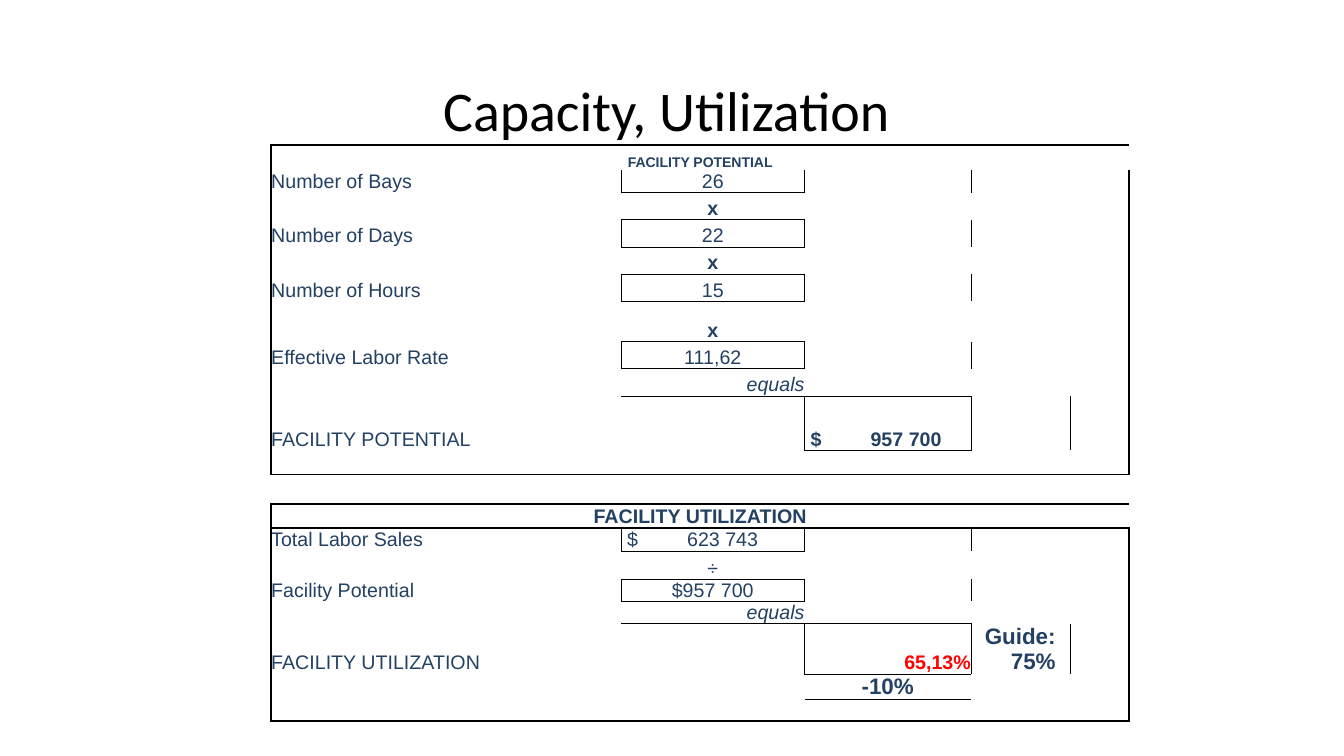
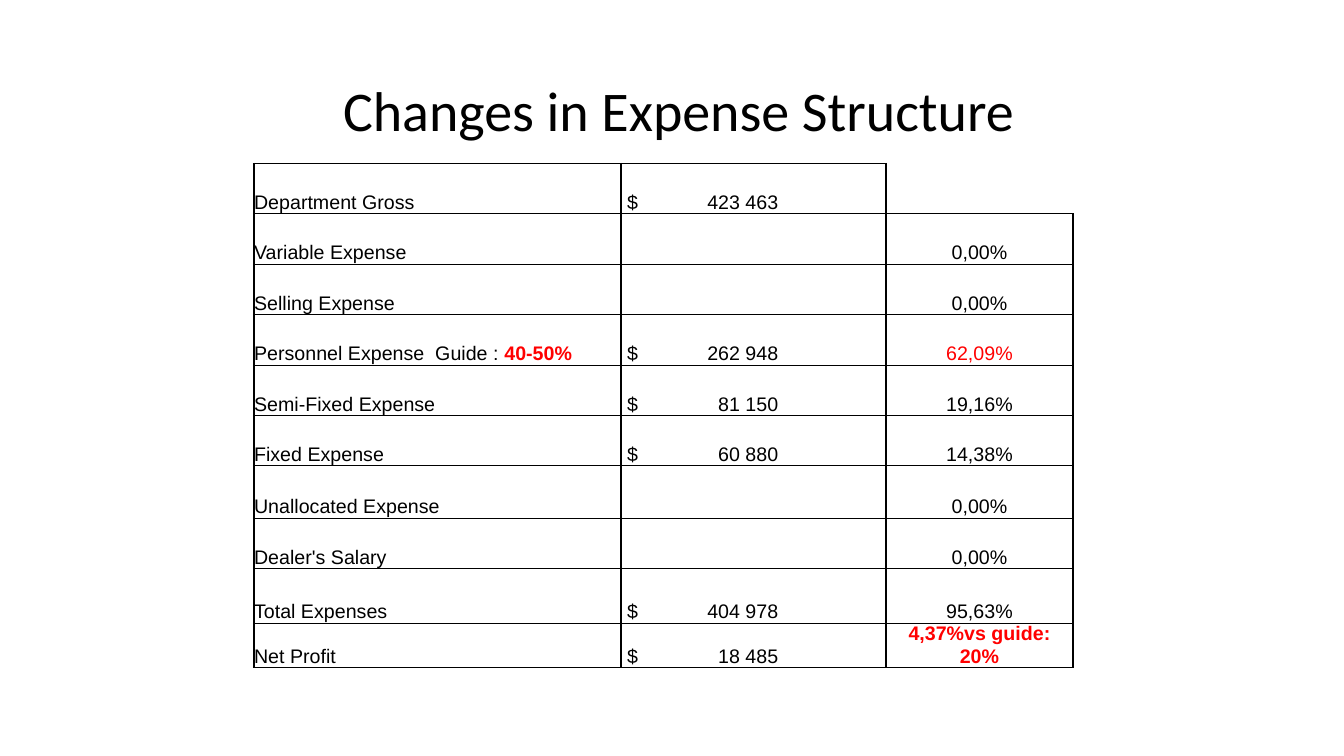
from dataclasses import dataclass

from lxml.etree import SubElement
from pptx import Presentation
from pptx.dml.color import RGBColor
from pptx.enum.text import MSO_ANCHOR, PP_ALIGN
from pptx.oxml.ns import qn
from pptx.util import Inches, Pt

LEFT, CENTER, RIGHT = PP_ALIGN.LEFT, PP_ALIGN.CENTER, PP_ALIGN.RIGHT
NO_STYLE_NO_GRID = "{2D5ABB26-0587-4C30-8999-92F81FD0307C}"
# Side of a cell: step to the neighbour and the neighbour's matching side
SIDES = {"L": (0, -1, "R"), "R": (0, 1, "L"), "T": (-1, 0, "B"), "B": (1, 0, "T")}


@dataclass(frozen=True)
class Theme:
    title_font: str = "Calibri"
    body_font: str = "Arial"
    black: str = "000000"
    navy: str = "244062"
    red: str = "FF0000"
    white: str = "FFFFFF"
    title_size: int = 40
    guide_size: int = 16
    body_size: int = 14
    small_size: int = 10
    thin: float = 0.5
    frame: float = 1.5
    column: float = 2


THEME = Theme()


def write(paragraph, text, align=LEFT, tab=None, size=THEME.body_size,
          color=THEME.black, font=THEME.body_font, bold=False, italic=False):
    paragraph.alignment = align
    if tab:
        tabs = SubElement(paragraph._p.get_or_add_pPr(), qn("a:tabLst"))
        SubElement(tabs, qn("a:tab"), pos=str(Inches(tab)), algn="r")
    run = paragraph.add_run()
    run.text = text
    run.font.name = font
    run.font.size = Pt(size)
    run.font.bold = bold
    run.font.italic = italic
    run.font.color.rgb = RGBColor.from_string(color)


def outline(boxes, row_count, column_count):
    """Map each cell to its border widths, on both sides of every shared edge."""
    borders = {}
    for top, left, bottom, right, sides, width in boxes:
        for row in range(top, bottom + 1):
            for column in range(left, right + 1):
                on_edge = {"L": column == left, "R": column == right,
                           "T": row == top, "B": row == bottom}
                for side in sides:
                    if not on_edge[side]:
                        continue
                    down, across, opposite = SIDES[side]
                    borders.setdefault((row, column), {})[side] = width
                    beside = row + down, column + across
                    if 0 <= beside[0] < row_count and 0 <= beside[1] < column_count:
                        borders.setdefault(beside, {})[opposite] = width
    return borders


class Deck:
    def __init__(self, theme):
        self.theme = theme
        self.presentation = Presentation()
        self.presentation.slide_width = Inches(13.33)
        self.presentation.slide_height = Inches(7.5)
        self.slide = None

    def add_slide(self, title, title_left):
        layout = self.presentation.slide_layouts[5]
        self.slide = self.presentation.slides.add_slide(layout)
        heading = self.slide.shapes.title
        heading.left, heading.top = Inches(title_left), Inches(0.4)
        heading.width, heading.height = Inches(11.5), Inches(1.45)
        heading.text_frame.vertical_anchor = MSO_ANCHOR.MIDDLE
        paragraph = heading.text_frame.paragraphs[0]
        paragraph.line_spacing = 0.9
        write(paragraph, title, CENTER, size=self.theme.title_size,
              font=self.theme.title_font, color=self.theme.black)

    def format_cell(self, cell, borders, pad_left=0, pad_right=0):
        cell.margin_top = cell.margin_bottom = 0
        cell.margin_left, cell.margin_right = Inches(pad_left), Inches(pad_right)
        cell.vertical_anchor = MSO_ANCHOR.BOTTOM
        properties = cell._tc.get_or_add_tcPr()
        for side in SIDES:
            if side in borders:
                line = SubElement(properties, qn(f"a:ln{side}"), w=str(Pt(borders[side])))
                fill = SubElement(line, qn("a:solidFill"))
                SubElement(fill, qn("a:srgbClr"), val=self.theme.black)
        cell.fill.solid()
        cell.fill.fore_color.rgb = RGBColor.from_string(self.theme.white)

    def add_table(self, left, top, widths, heights, entries, boxes, banners=(), **style):
        """Entries map (row, column) to a list of (text, format) runs."""
        table = self.slide.shapes.add_table(
            len(heights), len(widths), Inches(left), Inches(top),
            Inches(sum(widths)), Inches(sum(heights))).table
        table.first_row = table.horz_banding = False
        table._tbl.tblPr[0].text = NO_STYLE_NO_GRID
        for column, width in zip(table.columns, widths):
            column.width = Inches(width)
        for row, height in zip(table.rows, heights):
            row.height = Inches(height)
        for row in banners:
            table.cell(row, 0).merge(table.cell(row, len(widths) - 1))

        borders = outline(boxes, len(heights), len(widths))
        for row in range(len(heights)):
            for column in range(len(widths)):
                cell = table.cell(row, column)
                paragraph = cell.text_frame.paragraphs[0]
                pads = {}
                for text, options in entries.get((row, column), []):
                    options = {**style, **options}
                    pads = {side: options.pop(side)
                            for side in ("pad_left", "pad_right") if side in options}
                    write(paragraph, text, **options)
                if not paragraph.runs:
                    SubElement(paragraph._p, qn("a:endParaRPr"),
                               sz=str(self.theme.small_size * 100))
                self.format_cell(cell, borders.get((row, column), {}), **pads)


def entry(text, **options):
    return [(text, options)]


def money(amount, tab, **options):
    return entry(f"$\t{amount}", tab=tab, pad_left=0.06, **options)


def build_capacity(deck):
    theme = deck.theme
    deck.add_slide("Capacity, Utilization", title_left=0.86)
    labels = {1: "Number of Bays", 3: "Number of Days", 5: "Number of Hours",
              7: "Effective Labor Rate", 9: "FACILITY POTENTIAL",
              13: "Total Labor Sales", 15: "Facility Potential",
              17: "FACILITY UTILIZATION"}
    factors = {1: "26", 3: "22", 5: "15", 7: "111,62", 15: "$957 700"}
    entries = {(row, 0): entry(label) for row, label in labels.items()}
    entries |= {(row, 1): entry(value, align=CENTER) for row, value in factors.items()}
    entries |= {(row, 1): entry("x", align=CENTER, bold=True) for row in (2, 4, 6)}
    entries |= {(row, 1): entry("equals", align=RIGHT, italic=True) for row in (8, 16)}
    entries |= {
        (0, 0): entry("FACILITY POTENTIAL", align=CENTER, bold=True, size=theme.small_size),
        (9, 2): money("957 700", 1.3, bold=True),
        (12, 0): entry("FACILITY UTILIZATION", align=CENTER, bold=True),
        (13, 1): money("623 743", 1.3),
        (14, 1): entry("÷", align=CENTER),
        (17, 2): entry("65,13%", align=RIGHT, bold=True, color=theme.red),
        (17, 3): entry("Guide: 75%", align=RIGHT, bold=True, size=theme.guide_size,
                       pad_right=0.15),
        (18, 2): entry("-10%", align=CENTER, bold=True, size=theme.guide_size),
    }
    boxes = [(row, 1, row, 1, "LRB" if row in (1, 13) else "LRTB", theme.thin)
             for row in (1, 3, 5, 7, 13, 15)]
    boxes += [(row, 2, row, 2, "LRTB", theme.thin) for row in (9, 17)]
    boxes += [(top, 0, bottom, 5, "LRTB", theme.frame) for top, bottom in ((0, 10), (12, 19))]
    deck.add_table(
        2.69, 1.44, [3.47, 1.82, 1.65, 0.99, 0.29, 0.29],
        [0.25, 0.22, 0.27, 0.27, 0.27, 0.27, 0.4, 0.27, 0.27, 0.54,
         0.24, 0.29, 0.24, 0.23, 0.28, 0.22, 0.22, 0.5, 0.25, 0.22],
        entries, boxes, banners=(0, 12), color=theme.navy)


def build_expenses(deck):
    theme = deck.theme
    deck.add_slide("Changes in Expense Structure", title_left=0.98)
    expenses = [
        ("Department Gross", "423 463", ""),
        ("Variable Expense", "", "0,00%"),
        ("Selling Expense", "", "0,00%"),
        ("Personnel Expense  Guide : ", "262 948", "62,09%"),
        ("Semi-Fixed Expense", "81 150", "19,16%"),
        ("Fixed Expense", "60 880", "14,38%"),
        ("Unallocated Expense", "", "0,00%"),
        ("Dealer's Salary", "", "0,00%"),
        ("Total Expenses", "404 978", "95,63%"),
        ("Net Profit", "18 485", "4,37%vs guide: 20%"),
    ]
    personnel, profit = 3, len(expenses) - 1
    entries = {}
    for row, (label, amount, share) in enumerate(expenses):
        entries[row, 0] = entry(label)
        if amount:
            entries[row, 1] = money(amount, 1.5)
        if share:
            color = theme.red if row in (personnel, profit) else theme.black
            entries[row, 2] = entry(share, align=CENTER, color=color, bold=row == profit)
    entries[personnel, 0] += entry("40-50%", color=theme.red, bold=True)

    boxes = [(0, 0, 0, 1, "T", theme.thin)]
    boxes += [(row, 0, row, 2, "TB", theme.thin) for row in range(1, len(expenses))]
    boxes += [(top, column, profit, column, "LR", theme.column)
              for column, top in enumerate((0, 0, 1))]
    boxes.append((0, 1, 0, 1, "R", theme.column))
    deck.add_table(2.52, 1.62, [3.64, 2.63, 1.85],
                   [0.5] * 6 + [0.52, 0.5, 0.54, 0.44], entries, boxes)


def main():
    deck = Deck(THEME)
    build_capacity(deck)
    build_expenses(deck)
    deck.presentation.save("out.pptx")


if __name__ == "__main__":
    main()
